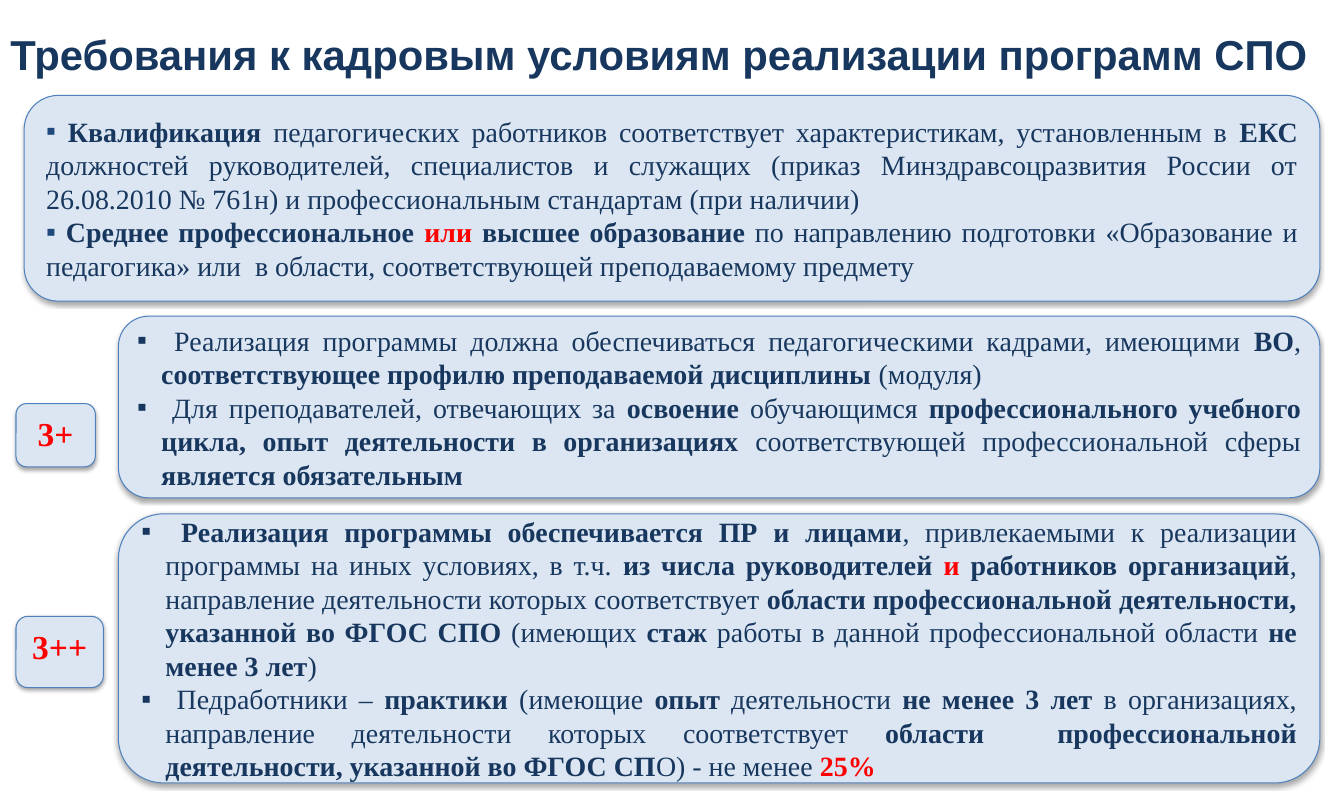
import pptx
import pptx.dml.color
import pptx.enum.shapes
import pptx.enum.text
import pptx.oxml.ns
import pptx.util
from lxml import etree

WIDTH, HEIGHT = 13.39, 7.88
COLORS = {"navy": "17375E", "red": "FF0000", "panel": "DCE6F2",
          "border": "4F81BD", "bullet": "1F497D", "shadow": "000000"}
ALIGN = pptx.enum.text.PP_ALIGN
ANCHOR = pptx.enum.text.MSO_ANCHOR
WIDE_INSETS, NARROW_INSETS = (0.12, 0.06), (0.1, 0.05)

TITLE = "Требования к кадровым условиям реализации программ СПО"

# Spans are divided by "|"; a leading "*" makes a span bold, "!" bold and red.
QUALIFICATION = [
    "* Квалификация| педагогических работников соответствует характеристикам, "
    "установленным в |*ЕКС| должностей руководителей, специалистов и служащих "
    "(приказ Минздравсоцразвития России от 26.08.2010 № 761н) и профессиональным "
    "стандартам (при наличии)",
    "* Среднее профессиональное |!или |*высшее образование| по направлению подготовки "
    "«Образование и педагогика» или  в области, соответствующей преподаваемому предмету",
]
THREE_PLUS = [
    "* |Реализация программы должна обеспечиваться педагогическими кадрами, имеющими "
    "|*ВО|, |*соответствующее профилю преподаваемой дисциплины| (модуля)",
    " Для преподавателей, отвечающих за |*освоение| обучающимся |*профессионального "
    "учебного цикла, опыт деятельности в организациях| соответствующей "
    "профессиональной сферы |*является обязательным",
]
THREE_PLUS_PLUS = [
    "* Реализация программы обеспечивается ПР и лицами|, привлекаемыми к реализации "
    "программы на иных условиях, в т.ч. |*из числа руководителей |!и |*работников "
    "организаций|, направление деятельности которых соответствует |*области "
    "профессиональной деятельности, указанной во ФГОС СПО |(имеющих |*стаж |работы "
    "в данной профессиональной области|* не менее 3 лет|)",
    " Педработники – |*практики |(имеющие |*опыт| деятельности |*не менее 3 лет |в "
    "организациях, направление деятельности которых соответствует |*области  "
    "профессиональной деятельности, указанной во ФГОС СП|О) - не менее |!25%",
]


def rgb(name):
    return pptx.dml.color.RGBColor.from_string(COLORS[name])


def place(left, top, width, height):
    """Turn percentages of the slide's size into lengths."""
    return [pptx.util.Inches(share * size / 100) for share, size in
            ((left, WIDTH), (top, HEIGHT), (width, WIDTH), (height, HEIGHT))]


def set_frame(shape, insets, anchor):
    frame = shape.text_frame
    frame.word_wrap = True
    frame.vertical_anchor = anchor
    frame.margin_left = frame.margin_right = pptx.util.Inches(insets[0])
    frame.margin_top = frame.margin_bottom = pptx.util.Inches(insets[1])
    return frame


def add_span(para, text, size, color="navy", bold=True, font="Times New Roman"):
    span = para.add_run()
    span.text = text
    span.font.size = pptx.util.Pt(size)
    span.font.name = font
    span.font.bold = bold
    span.font.color.rgb = rgb(color)


def add_marked_spans(para, marked_text):
    for part in marked_text.split("|"):
        mark = part[0] if part[0] in "*!" else ""
        add_span(para, part[len(mark):], 20,
                 color="red" if mark == "!" else "navy", bold=bool(mark))


def add_child(parent, tag, **attributes):
    return etree.SubElement(parent, pptx.oxml.ns.qn(tag), attributes)


def set_bullet(para, hanging, color):
    properties = para._p.get_or_add_pPr()
    indent = pptx.util.Inches(hanging)
    properties.set("marL", str(indent))
    properties.set("indent", str(-indent))
    add_child(add_child(properties, "a:buClr"), "a:srgbClr", val=COLORS[color])
    add_child(properties, "a:buFont", typeface="Arial")
    add_child(properties, "a:buChar", char="▪")


def add_soft_shadow(shape):
    shape.shadow.inherit = False
    effects = shape._element.spPr.find(pptx.oxml.ns.qn("a:effectLst"))
    shadow = add_child(effects, "a:outerShdw", blurRad=str(pptx.util.Pt(3.1)),
                       dist=str(pptx.util.Pt(1.8)), dir="5400000", rotWithShape="0")
    color = add_child(shadow, "a:srgbClr", val=COLORS["shadow"])
    add_child(color, "a:alpha", val="35000")


def add_rounded_box(page, area):
    box = page.shapes.add_shape(
        pptx.enum.shapes.MSO_SHAPE.ROUNDED_RECTANGLE, *place(*area))
    box.fill.solid()
    box.fill.fore_color.rgb = rgb("panel")
    box.line.color.rgb = rgb("border")
    box.line.width = pptx.util.Pt(0.75)
    add_soft_shadow(box)
    return box


def add_title(page, area):
    box = page.shapes.add_textbox(*place(*area))
    para = set_frame(box, WIDE_INSETS, ANCHOR.MIDDLE).paragraphs[0]
    para.alignment = ALIGN.CENTER
    add_span(para, TITLE, 30, font="Arial")


def add_panel(page, area, items, insets=NARROW_INSETS, hanging=0.24, bullet="navy"):
    frame = set_frame(add_rounded_box(page, area), insets, ANCHOR.MIDDLE)
    for index, item in enumerate(items):
        para = frame.add_paragraph() if index else frame.paragraphs[0]
        para.alignment = ALIGN.JUSTIFY
        set_bullet(para, hanging, bullet)
        add_marked_spans(para, item)


def add_badge(page, area, label):
    frame = set_frame(add_rounded_box(page, area), WIDE_INSETS, ANCHOR.TOP)
    para = frame.paragraphs[0]
    para.alignment = ALIGN.CENTER
    add_span(para, label, 24, color="red")


def main():
    deck = pptx.Presentation()
    deck.slide_width = pptx.util.Inches(WIDTH)
    deck.slide_height = pptx.util.Inches(HEIGHT)
    page = deck.slides.add_slide(deck.slide_layouts[6])

    add_title(page, (-1.79, 0, 101.72, 13.71))
    add_panel(page, (1.79, 12.06, 96.42, 26.02), QUALIFICATION,
              insets=WIDE_INSETS, hanging=0, bullet="bullet")
    add_panel(page, (8.81, 39.97, 89.4, 22.97), THREE_PLUS)
    add_panel(page, (8.81, 64.97, 89.4, 34.01), THREE_PLUS_PLUS)
    add_badge(page, (1.19, 51.02, 5.9, 7.99), "3+")
    add_badge(page, (1.19, 77.92, 6.5, 9.01), "3++")
    deck.save("out.pptx")


if __name__ == "__main__":
    main()
